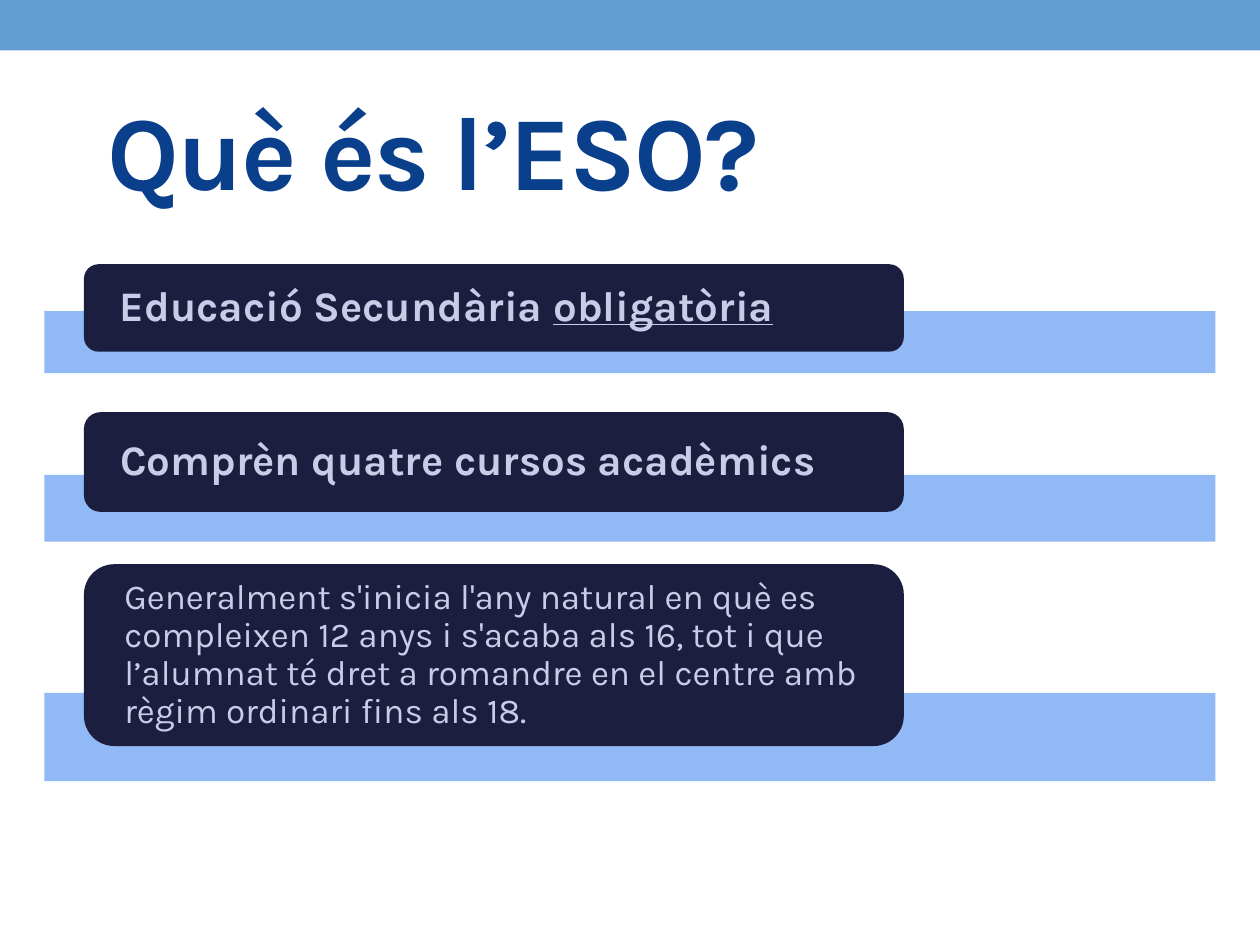
from dataclasses import dataclass

from lxml.etree import SubElement
from pptx import Presentation
from pptx.dml.color import RGBColor
from pptx.enum.shapes import MSO_SHAPE
from pptx.enum.text import MSO_ANCHOR, MSO_AUTO_SIZE, PP_ALIGN
from pptx.oxml.ns import qn
from pptx.util import Pt

# Content: bands and cards as (top, height) in points, text as (words, underlined)
TITLE = "Què és l’ESO?"
ROWS = [
    {"band": (177.8, 35.5), "card": (151, 50), "size": 24, "bold": True,
     "text": [("Educació Secundària ", False), ("obligatòria", True)]},
    {"band": (271.4, 38.2), "card": (235.5, 57), "size": 24, "bold": True,
     "text": [("Comprèn quatre cursos acadèmics", False)]},
    {"band": (396, 50.4), "card": (322.4, 103.9), "size": 20, "bold": False,
     "text": [("Generalment s'inicia l'any natural en què es compleixen 12 anys "
               "i s'acaba als 16, tot i que l’alumnat té dret a romandre en el "
               "centre amb règim ordinari fins als 18.", False)]},
]


@dataclass(frozen=True)
class Theme:
    font: str = "Karla"
    title_size: int = 60
    title: str = "0A3F8C"
    header: str = "629DD1"
    band: str = "85B2F6"
    band_opacity: int = 90
    card: str = "1B1E3E"
    card_text: str = "C9CBE7"


THEME = Theme()
SLIDE_WIDTH, SLIDE_HEIGHT = 720, 540
BAND_LEFT, BAND_WIDTH = 25.4, 669.2
CARD_LEFT, CARD_WIDTH = 48, 468.5
CARD_INSET = 18


def add_block(slide, kind, left, top, width, height, color):
    block = slide.shapes.add_shape(kind, Pt(left), Pt(top), Pt(width), Pt(height))
    block.shadow.inherit = False
    block.fill.solid()
    block.fill.fore_color.rgb = RGBColor.from_string(color)
    block.line.fill.background()
    return block


def set_opacity(shape, percent):
    color = shape.fill._xPr.find(qn("a:solidFill"))[0]
    SubElement(color, qn("a:alpha")).set("val", str(percent * 1000))


def style_span(span, size, color, bold):
    span.font.name = THEME.font
    span.font.size = Pt(size)
    span.font.bold = bold
    span.font.color.rgb = RGBColor.from_string(color)


def add_title(slide):
    title = slide.shapes.title
    title.left, title.top, title.width, title.height = Pt(54), Pt(54.7), Pt(643), Pt(59.8)
    frame = title.text_frame
    frame.text = TITLE
    frame.auto_size = MSO_AUTO_SIZE.NONE
    frame.vertical_anchor = MSO_ANCHOR.MIDDLE
    para = frame.paragraphs[0]
    para.alignment = PP_ALIGN.LEFT
    span = para.runs[0]
    style_span(span, THEME.title_size, THEME.title, True)
    span.font._element.set("spc", "-100")


def add_row(slide, row):
    # Translucent band behind the card
    top, height = row["band"]
    band = add_block(slide, MSO_SHAPE.RECTANGLE, BAND_LEFT, top, BAND_WIDTH, height, THEME.band)
    set_opacity(band, THEME.band_opacity)

    # Rounded card with its text
    top, height = row["card"]
    card = add_block(slide, MSO_SHAPE.ROUNDED_RECTANGLE, CARD_LEFT, top, CARD_WIDTH, height,
                     THEME.card)
    frame = card.text_frame
    frame.word_wrap = True
    frame.vertical_anchor = MSO_ANCHOR.MIDDLE
    frame.margin_left = frame.margin_right = Pt(CARD_INSET)
    frame.margin_top = frame.margin_bottom = Pt(0)
    para = frame.paragraphs[0]
    para.alignment = PP_ALIGN.LEFT
    para.line_spacing = 0.9
    for words, underlined in row["text"]:
        span = para.add_run()
        span.text = words
        style_span(span, row["size"], THEME.card_text, row["bold"])
        if underlined:
            span.font.underline = True


def main():
    deck = Presentation()
    deck.slide_width, deck.slide_height = Pt(SLIDE_WIDTH), Pt(SLIDE_HEIGHT)
    slide = deck.slides.add_slide(deck.slide_layouts[5])

    # Header strip
    add_block(slide, MSO_SHAPE.RECTANGLE, 0, 0, SLIDE_WIDTH, 28.8, THEME.header)
    add_title(slide)
    for row in ROWS:
        add_row(slide, row)
    deck.save("out.pptx")


if __name__ == "__main__":
    main()
